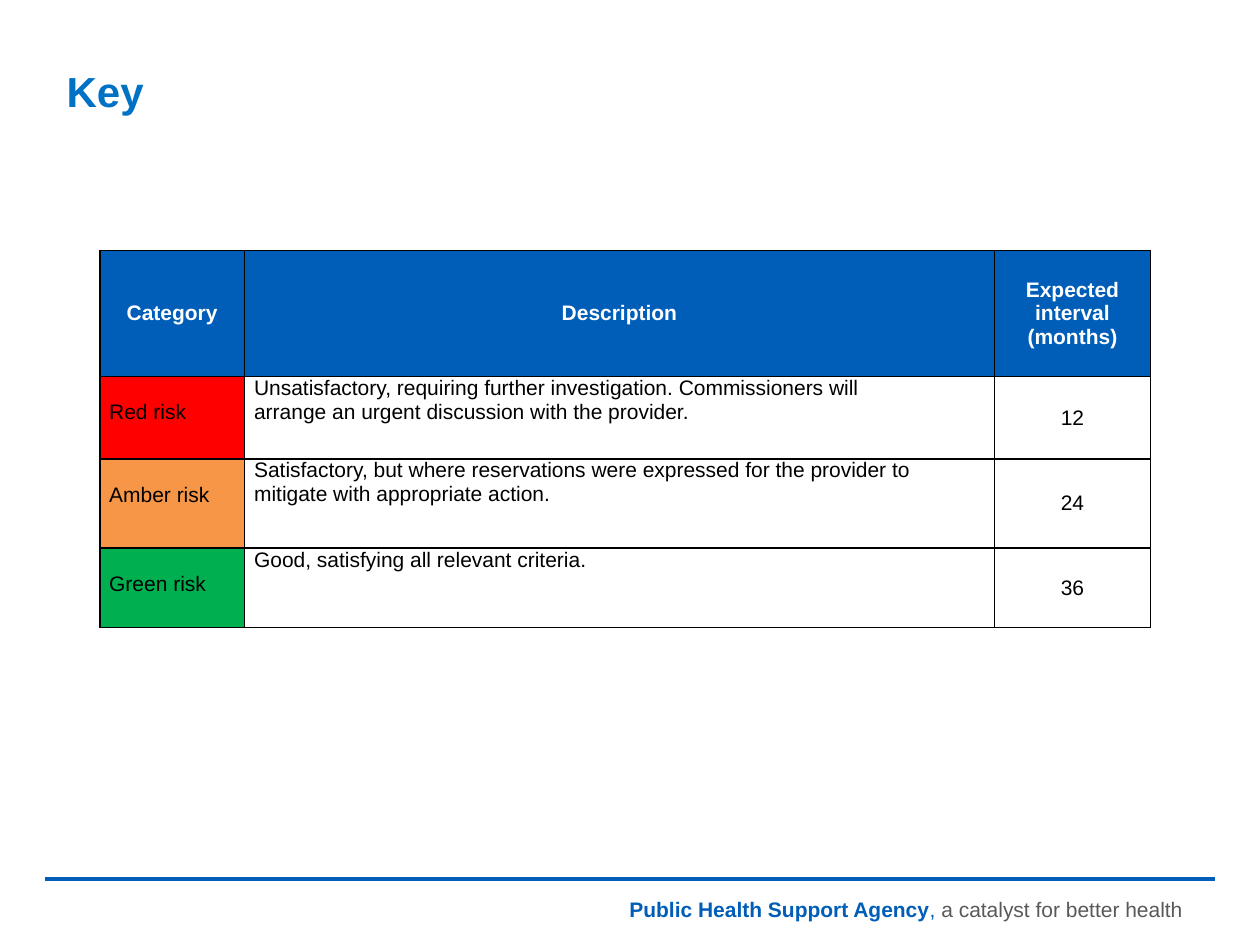
from dataclasses import dataclass

from lxml import etree
from pptx import Presentation
from pptx.dml.color import RGBColor
from pptx.enum.shapes import MSO_CONNECTOR
from pptx.enum.text import MSO_ANCHOR, PP_ALIGN
from pptx.oxml.ns import qn
from pptx.util import Pt

STRAIGHT = MSO_CONNECTOR.STRAIGHT
TOP, MIDDLE = MSO_ANCHOR.TOP, MSO_ANCHOR.MIDDLE
LEFT, CENTER = PP_ALIGN.LEFT, PP_ALIGN.CENTER


@dataclass(frozen=True)
class Theme:
    font: str = "Arial"
    title_size: float = 24
    body_size: float = 12
    title: str = "0072C6"
    blue: str = "005EB8"
    grey: str = "595959"
    white: str = "FFFFFF"
    black: str = "000000"
    red: str = "FF0000"
    amber: str = "F79646"
    green: str = "00B050"


T = Theme()

HEADERS = ["Category", "Description", "Expected interval (months)"]
RISKS = [
    ("Red risk", T.red,
     "Unsatisfactory, requiring further investigation. Commissioners will\n"
     "arrange an urgent discussion with the provider.", "12"),
    ("Amber risk", T.amber,
     "Satisfactory, but where reservations were expressed for the provider "
     "to mitigate with appropriate action.", "24"),
    ("Green risk", T.green, "Good, satisfying all relevant criteria.", "36"),
]
COL_WIDTHS = [82.8, 428.4, 89.3]
ROW_HEIGHTS = [72, 47, 51, 45.4]
CATEGORY_DROP = 13.8  # one line of body text


def style(font, color, size=T.body_size, bold=False):
    font.name = T.font
    font.size = Pt(size)
    font.bold = bold
    font.color.rgb = RGBColor.from_string(color)


def add_text(s, x, y, w, h, runs, size, wrap=True, top=3.6):
    """Add a one-paragraph box; runs are (text, colour, bold)."""
    tf = s.shapes.add_textbox(Pt(x), Pt(y), Pt(w), Pt(h)).text_frame
    tf.word_wrap = wrap
    tf.margin_top = Pt(top)
    p = tf.paragraphs[0]
    for text, color, bold in runs:
        r = p.add_run()
        r.text = text
        style(r.font, color, size, bold)


def add_rule(s, x1, x2, y):
    line = s.shapes.add_connector(STRAIGHT, Pt(x1), Pt(y), Pt(x2), Pt(y))
    line.line.color.rgb = RGBColor.from_string(T.blue)
    line.line.width = Pt(2.25)
    etree.SubElement(line._element.spPr, qn("a:effectLst"))


def add_borders(cell):
    tcPr = cell._tc.get_or_add_tcPr()
    for side in ("lnL", "lnR", "lnT", "lnB"):
        ln = etree.SubElement(tcPr, qn(f"a:{side}"), w=str(Pt(1)))
        fill = etree.SubElement(ln, qn("a:solidFill"))
        etree.SubElement(fill, qn("a:srgbClr"), val=T.black)


def fill_cell(cell, text, fill=None, color=T.black, bold=False,
              align=LEFT, anchor=TOP, top=0):
    add_borders(cell)
    if fill:
        cell.fill.solid()
        cell.fill.fore_color.rgb = RGBColor.from_string(fill)
    else:
        cell.fill.background()
    cell.margin_left = cell.margin_right = Pt(5.4)
    cell.margin_top, cell.margin_bottom = Pt(top), Pt(0)
    cell.vertical_anchor = anchor
    cell.text_frame.text = text
    for p in cell.text_frame.paragraphs:
        p.alignment = align
        for r in p.runs:
            style(r.font, color, bold=bold)


def add_risk_table(s, x, y):
    table = s.shapes.add_table(
        len(ROW_HEIGHTS), len(COL_WIDTHS), Pt(x), Pt(y),
        Pt(sum(COL_WIDTHS)), Pt(sum(ROW_HEIGHTS))).table
    for col, width in zip(table.columns, COL_WIDTHS):
        col.width = Pt(width)
    for row, height in zip(table.rows, ROW_HEIGHTS):
        row.height = Pt(height)
    # Header row
    for c, text in enumerate(HEADERS):
        fill_cell(table.cell(0, c), text, T.blue, T.white, True, CENTER, MIDDLE)
    # One row per risk level
    for i, (name, color, description, months) in enumerate(RISKS, 1):
        fill_cell(table.cell(i, 0), name, color, top=CATEGORY_DROP)
        fill_cell(table.cell(i, 1), description)
        fill_cell(table.cell(i, 2), months, align=CENTER, anchor=MIDDLE)


def main():
    prs = Presentation()
    prs.slide_width, prs.slide_height = Pt(720), Pt(540)
    s = prs.slides.add_slide(prs.slide_layouts[6])

    # Footer
    add_rule(s, 25.7, 694.3, 502.3)
    add_text(s, 352.6, 509, 352.8, 21.8,
             [("Public Health Support Agency", T.blue, True),
              (", ", T.blue, False),
              ("a catalyst for better health", T.grey, False)],
             T.body_size, wrap=False)

    # Title and key
    add_text(s, 31, 31.7, 653, 45.4, [("Key", T.title, True)],
             T.title_size, top=5.8)
    add_risk_table(s, 57, 143.2)

    prs.save("out.pptx")


if __name__ == "__main__":
    main()
